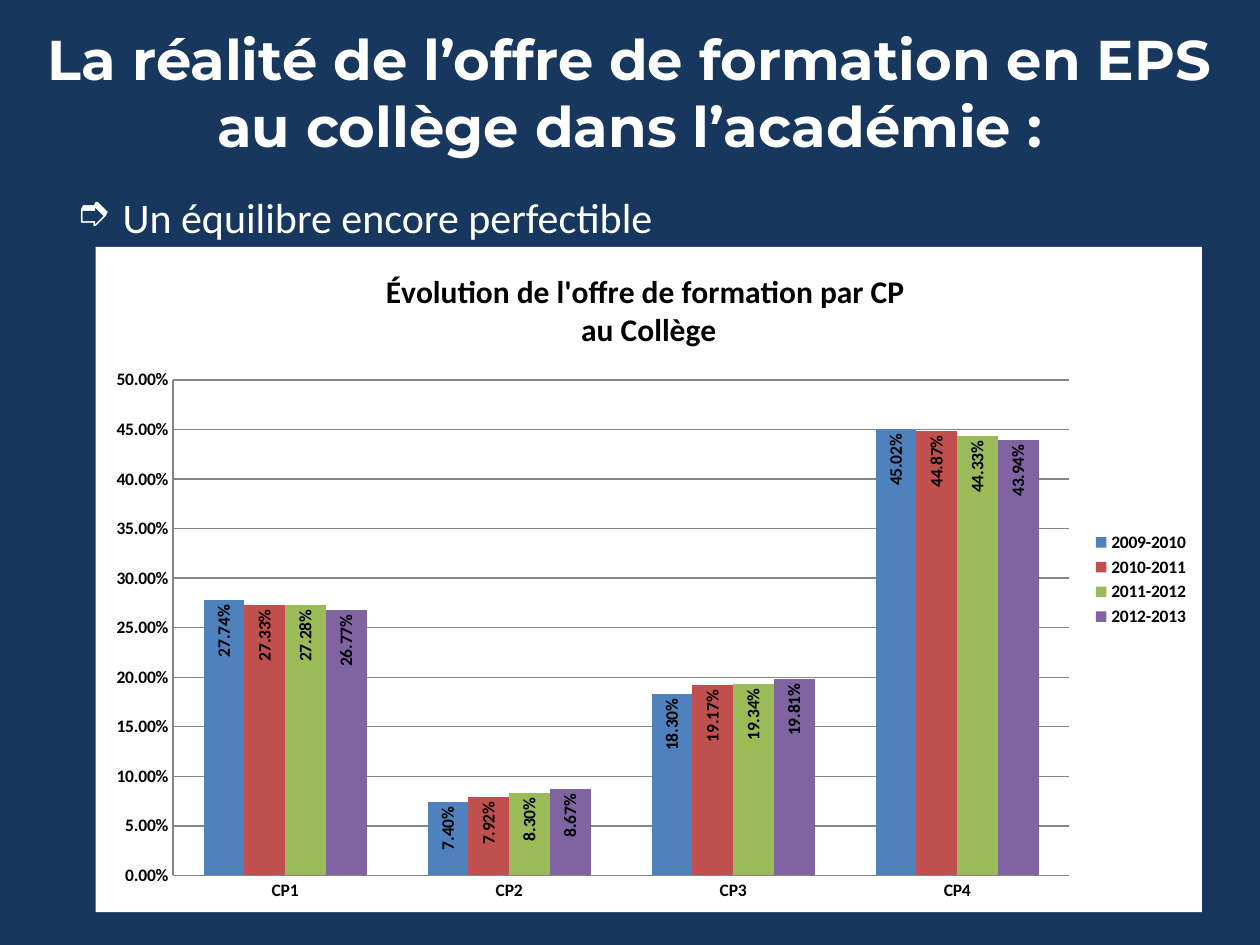
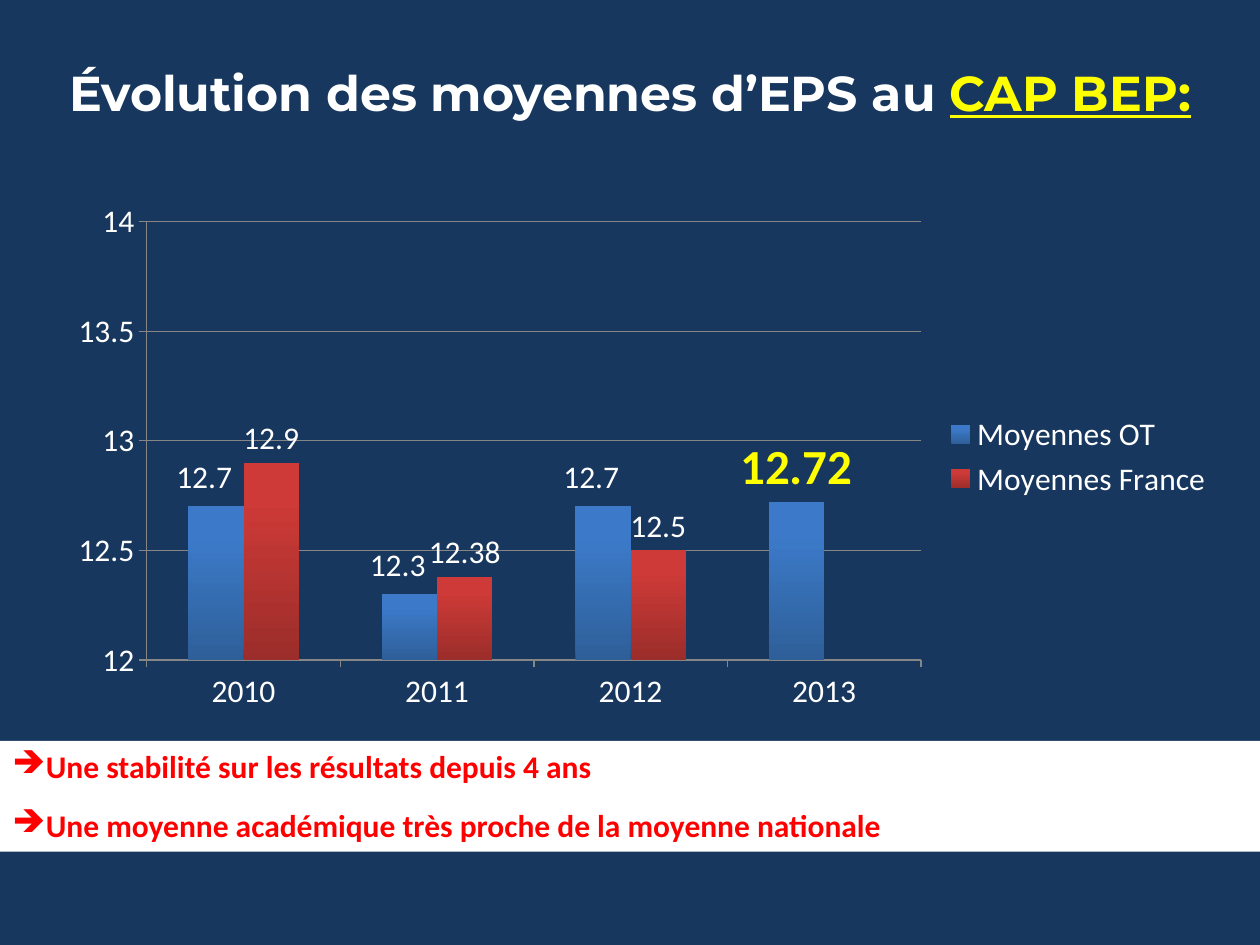
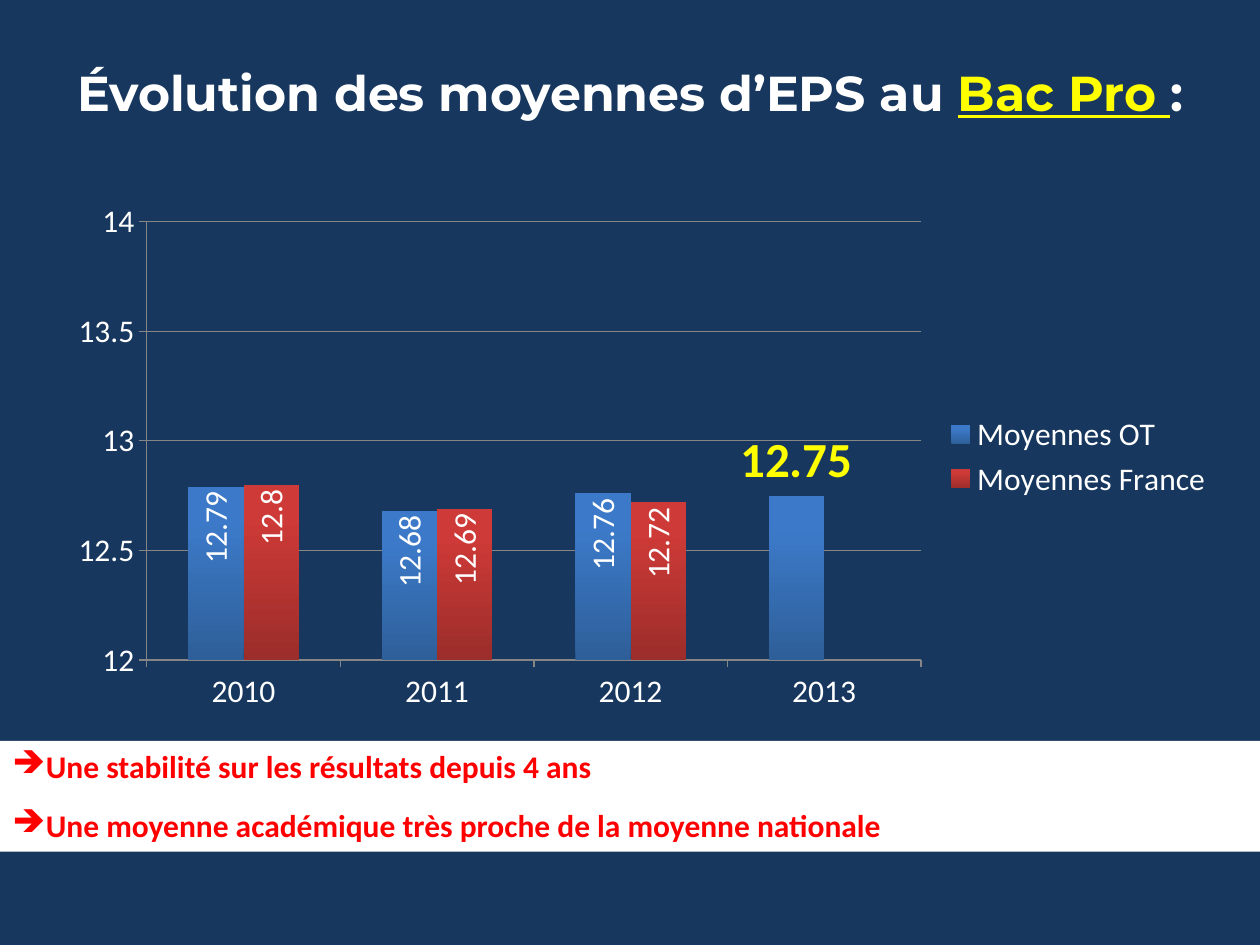
"""Build three slides on PE provision and average marks."""
from lxml import etree
from pptx import Presentation
from pptx import util as u
from pptx.chart.data import CategoryChartData
from pptx.dml.color import RGBColor
from pptx.enum import chart as charts, shapes, text
from pptx.oxml import parse_xml
from pptx.oxml.ns import nsdecls, qn

NAVY, WHITE, BLACK, RED, YELLOW, GREY = "17375E", "FFFFFF", "000000", "FF0000", "FFFF00", "868686"
TITLE = {"name": "Montserrat", "bold": True, "color": WHITE}
ACCENT = {"color": YELLOW, "underline": True}
LABEL = {"name": "Calibri", "size": u.Pt(18), "bold": False, "color": WHITE}
HIGHLIGHT = {**LABEL, "size": u.Pt(28), "bold": True, "color": YELLOW}
SMALL = {"name": "Calibri", "size": u.Pt(10), "bold": True, "color": BLACK}

TITLE_BOX = (0, 0, 720, 105)
BODY_BOX = (36, 105.84, 665, 386)
BANNER_BOX = (0, 423.36, 720, 63.36)
PROVISION_BOX = (54.72, 141.12, 632.16, 380.16)
MARKS_BOX = (30.24, 110.16, 670.32, 301.68)

PROVISION_TITLE = ["Évolution de l'offre de formation par CP ", "au Collège"]
PROVISION = {
    "categories": ["CP1", "CP2", "CP3", "CP4"],
    "series": [
        ("2009-2010", [0.2774, 0.074, 0.183, 0.4502], ["4F81BD"]),
        ("2010-2011", [0.2733, 0.0792, 0.1917, 0.4487], ["C0504D"]),
        ("2011-2012", [0.2728, 0.083, 0.1934, 0.4433], ["9BBB59"]),
        ("2012-2013", [0.2677, 0.0867, 0.1981, 0.4394], ["8064A2"]),
    ],
    "scale": (0, 0.5, 0.05),
    "number_format": "0.00%",
    "tick": charts.XL_TICK_MARK.NONE,
    "layout": (0.07, 0.2, 0.81, 0.745),
    "font": SMALL,
    "background": WHITE,
    "rotated": True,
}
YEARS = ["2010", "2011", "2012", "2013"]
MARK_SERIES = [("Moyennes OT", ["2E5F99", "3C7AC9"]), ("Moyennes France", ["9B2D2A", "CD3A37"])]
MARK_SLIDES = [
    ([("CAP BEP:", ACCENT)],
     [[12.7, 12.3, 12.7, 12.72], [12.9, 12.38, 12.5, None]], False),
    ([("Bac Pro ", ACCENT), (":", {})],
     [[12.79, 12.68, 12.76, 12.75], [12.8, 12.69, 12.72, None]], True),
]
FINDINGS = ["Une stabilité sur les résultats depuis 4 ans",
            "Une moyenne académique très proche de la moyenne nationale"]


def rgb(value):
    """Turn a hex string into a colour."""
    return RGBColor.from_string(value)


def style(font, values):
    """Apply a dict of format values to a font."""
    for name, value in values.items():
        if name == "color":
            font.color.rgb = rgb(value)
        else:
            setattr(font, name, value)


def points(box):
    """Convert a box to lengths."""
    return [u.Pt(value) for value in box]


def add_text_box(slide, box, anchor):
    """Add a wrapping text box and return its frame."""
    frame = slide.shapes.add_textbox(*points(box)).text_frame
    frame.word_wrap = True
    frame.vertical_anchor = anchor
    return frame


def add_title(slide, size, runs):
    """Add the centred slide title."""
    paragraph = add_text_box(slide, TITLE_BOX, text.MSO_ANCHOR.MIDDLE).paragraphs[0]
    paragraph.alignment = text.PP_ALIGN.CENTER
    for words, extra in runs:
        run = paragraph.add_run()
        run.text = words
        style(run.font, {**TITLE, "size": u.Pt(size), **extra})


def add_bullet(paragraph, symbol, words, values, indent=0):
    """Fill a paragraph with a bulleted line."""
    properties = paragraph._p.get_or_add_pPr()
    properties.set("marL", str(u.Pt(indent)))
    properties.set("indent", str(-u.Pt(indent)))
    etree.SubElement(properties, qn("a:buChar")).set("char", symbol)
    paragraph.alignment = text.PP_ALIGN.LEFT
    run = paragraph.add_run()
    run.text = words
    style(run.font, values)


def add_banner(slide):
    """Add the white band with the findings."""
    banner = slide.shapes.add_shape(shapes.MSO_SHAPE.RECTANGLE, *points(BANNER_BOX))
    banner.shadow.inherit = False
    banner.fill.solid()
    banner.fill.fore_color.rgb = rgb(WHITE)
    banner.line.fill.background()
    frame = banner.text_frame
    frame.word_wrap = True
    frame.vertical_anchor = text.MSO_ANCHOR.TOP
    for index, finding in enumerate(FINDINGS):
        paragraph = frame.add_paragraph() if index else frame.paragraphs[0]
        add_bullet(paragraph, "➔", finding, {**LABEL, "bold": True, "color": RED})
        paragraph.space_before = u.Pt(6 if index else 0)
        paragraph.space_after = u.Pt(6)


def manual_layout(x, y, width=None, height=None):
    """Return a chart layout element; without a size it is an offset."""
    parts = "" if width is None else (
        '<c:layoutTarget val="inner"/><c:xMode val="edge"/><c:yMode val="edge"/>')
    sizes = "" if width is None else f'<c:w val="{width}"/><c:h val="{height}"/>'
    return parse_xml(f'<c:layout {nsdecls("c")}><c:manualLayout>{parts}<c:x val="{x}"/>'
                     f'<c:y val="{y}"/>{sizes}</c:manualLayout></c:layout>')


def fill_series(series, colors):
    """Fill a series with one colour or a vertical gradient."""
    fill = series.format.fill
    if len(colors) == 1:
        fill.solid()
        fill.fore_color.rgb = rgb(colors[0])
        return
    fill.gradient()
    fill.gradient_angle = 90
    for stop, color, position in zip(fill.gradient_stops, colors, (0, 0.8)):
        stop.color.rgb = rgb(color)
        stop.position = position


def add_column_chart(slide, box, content):
    """Add a clustered column chart with value labels."""
    data = CategoryChartData(number_format=content["number_format"])
    data.categories = content["categories"]
    for name, values, _ in content["series"]:
        data.add_series(name, values)
    chart = slide.shapes.add_chart(
        charts.XL_CHART_TYPE.COLUMN_CLUSTERED, *points(box), data).chart
    style(chart.font, content["font"])
    chart.has_title = False
    chart.has_legend = True
    chart.legend.position = charts.XL_LEGEND_POSITION.RIGHT
    chart.legend.include_in_layout = False
    style(chart.legend.font, content["font"])

    minimum, maximum, step = content["scale"]
    values_axis = chart.value_axis
    for name, value in {"minimum_scale": minimum, "maximum_scale": maximum,
                        "major_unit": step, "has_major_gridlines": True}.items():
        setattr(values_axis, name, value)
    values_axis.tick_labels.number_format = content["number_format"]
    values_axis.tick_labels.number_format_is_linked = False
    for axis in (chart.category_axis, values_axis):
        axis.major_tick_mark = content["tick"]
        axis.minor_tick_mark = charts.XL_TICK_MARK.NONE
        style(axis.tick_labels.font, content["font"])
    for lined in (chart.category_axis, values_axis, values_axis.major_gridlines):
        lined.format.line.color.rgb = rgb(GREY)
        lined.format.line.width = u.Pt(0.75)

    plot = chart.plots[0]
    plot.gap_width, plot.overlap, plot.vary_by_categories = 150, 0, False
    place = charts.XL_LABEL_POSITION
    for series, (_, _, colors) in zip(plot.series, content["series"]):
        fill_series(series, colors)
        series.invert_if_negative = False
        labels = series.data_labels
        labels.show_value = True
        labels.number_format = content["number_format"]
        labels.number_format_is_linked = False
        labels.position = place.INSIDE_END if content["rotated"] else place.OUTSIDE_END
        style(labels.font, content["font"])
    if content["rotated"]:
        for body in chart.element.xpath(".//c:ser/c:dLbls/c:txPr/a:bodyPr"):
            body.set("rot", "-5400000")
            body.set("vert", "horz")

    area = chart.element.xpath("c:chart/c:plotArea")[0]
    for old in area.findall(qn("c:layout")):
        area.remove(old)
    area.insert(0, manual_layout(*content["layout"]))
    background = content["background"]
    paint = (f'<a:solidFill><a:srgbClr val="{background}"/></a:solidFill>'
             if background else "<a:noFill/>")
    chart.element.xpath("c:chart")[0].addnext(parse_xml(
        f'<c:spPr {nsdecls("c", "a")}>{paint}<a:ln><a:noFill/></a:ln></c:spPr>'))
    return chart


def mark_labels(chart, rotated):
    """Highlight the last mark and shift the upright labels before it."""
    own_marks = chart.plots[0].series[0]
    last = len(YEARS) - 1
    for index in range(last if rotated else 0, len(YEARS)):
        label = own_marks.points[index].data_label
        style(label.font, HIGHLIGHT if index == last else LABEL)
        label.position = charts.XL_LABEL_POSITION.OUTSIDE_END
    for label in chart.element.xpath(".//c:ser[1]/c:dLbls/c:dLbl"):
        label.find(qn("c:txPr")).find(qn("a:bodyPr")).set("rot", "0")
        index = label.find(qn("c:idx"))
        if index.get("val") != str(last):
            index.addnext(manual_layout(-0.01, -0.01))


def add_provision_slide(presentation):
    """Add the slide on the balance of provision."""
    slide = presentation.slides.add_slide(presentation.slide_layouts[6])
    add_title(slide, 32, [
        ("La réalité de l’offre de formation en EPS au collège dans l’académie :", {})])
    body = add_text_box(slide, BODY_BOX, text.MSO_ANCHOR.TOP)
    add_bullet(body.paragraphs[0], "➮", "Un équilibre encore perfectible",
               {**LABEL, "size": u.Pt(24)}, 27)
    chart = add_column_chart(slide, PROVISION_BOX, PROVISION)
    frame = chart.chart_title.text_frame
    for index, line in enumerate(PROVISION_TITLE):
        paragraph = frame.add_paragraph() if index else frame.paragraphs[0]
        run = paragraph.add_run()
        run.text = line
        style(run.font, {**SMALL, "size": u.Pt(18)})
    chart.chart_title.include_in_layout = False


def add_marks_slide(presentation, exam, marks, rotated):
    """Add a slide comparing average marks for one exam."""
    slide = presentation.slides.add_slide(presentation.slide_layouts[6])
    add_title(slide, 28, [("Évolution des moyennes d’EPS au ", {}), *exam])
    add_banner(slide)
    chart = add_column_chart(slide, MARKS_BOX, {
        "categories": YEARS,
        "series": [(name, values, colors)
                   for (name, colors), values in zip(MARK_SERIES, marks)],
        "scale": (12, 14, 0.5),
        "number_format": "General",
        "tick": charts.XL_TICK_MARK.OUTSIDE,
        "layout": (0.08, 0.055, 0.66, 0.83),
        "font": LABEL,
        "background": None,
        "rotated": rotated,
    })
    mark_labels(chart, rotated)


def main():
    """Build and save the presentation."""
    presentation = Presentation()
    presentation.slide_width, presentation.slide_height = u.Pt(720), u.Pt(540)
    background = presentation.slide_master.background.fill
    background.solid()
    background.fore_color.rgb = rgb(NAVY)
    add_provision_slide(presentation)
    for exam, marks, rotated in MARK_SLIDES:
        add_marks_slide(presentation, exam, marks, rotated)
    presentation.save("out.pptx")


if __name__ == "__main__":
    main()
